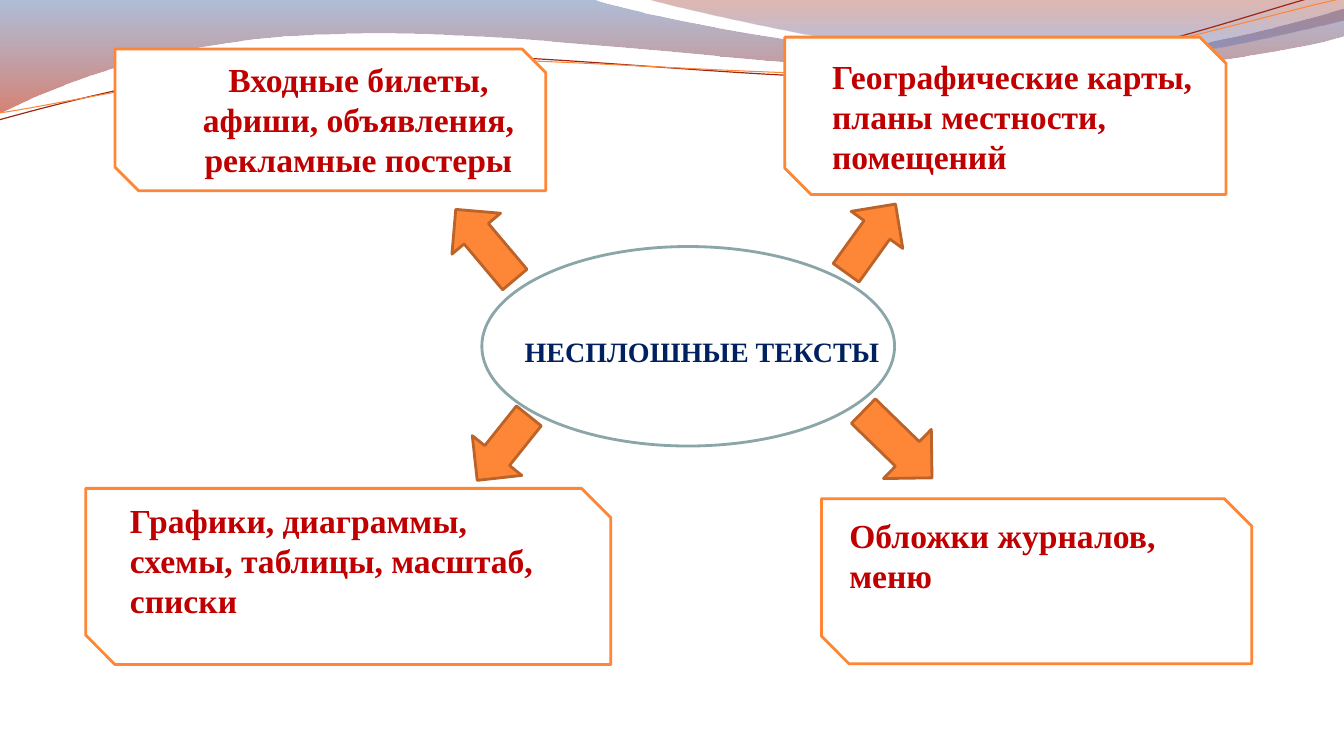
from math import cos, radians, sin

from lxml import etree
from pptx import Presentation
from pptx.dml.color import RGBColor
from pptx.enum.shapes import MSO_SHAPE
from pptx.enum.text import MSO_AUTO_SIZE, PP_ALIGN
from pptx.oxml.ns import qn
from pptx.util import Pt

CARD = MSO_SHAPE.SNIP_2_DIAG_RECTANGLE
ARROW = MSO_SHAPE.RIGHT_ARROW
OVAL = MSO_SHAPE.OVAL
FIT = MSO_AUTO_SIZE.SHAPE_TO_FIT_TEXT
LEFT, CENTER = PP_ALIGN.LEFT, PP_ALIGN.CENTER

COLORS = {
    "white": "FFFFFF", "orange": "FE8637", "dark_orange": "BC6329",
    "sage": "8AA6A8", "navy": "002060", "crimson": "C00000",
    "rust": "9E2713", "blue": "4F6EA8", "red": "B61A00",
    "brown": "951500", "sky": "5681D1",
}
RGB = {name: RGBColor.from_string(value) for name, value in COLORS.items()}

prs = Presentation()
prs.slide_width, prs.slide_height = Pt(960), Pt(540)
slide = prs.slides.add_slide(prs.slide_layouts[6])
shapes = slide.shapes


def add_curve(segments, closed):
    anchors = [(Pt(x), Pt(y)) for x, y in (segment[-1] for segment in segments)]
    builder = shapes.build_freeform(*anchors[0])
    builder.add_line_segments(anchors[1:], close=closed)
    curve = builder.convert_to_shape()
    curve.shadow.inherit = False
    for line_to, segment in zip(list(curve._element.iter(qn("a:lnTo"))), segments[1:]):
        if len(segment) == 3:
            line_to.clear()
            bend = etree.SubElement(line_to.getparent(), qn("a:cubicBezTo"))
            line_to.getparent().replace(line_to, bend)
            for x, y in segment:
                point = etree.SubElement(bend, qn("a:pt"))
                point.set("x", str(Pt(x) - curve.left))
                point.set("y", str(Pt(y) - curve.top))
    return curve


def add_preset(kind, box, fill, line, rotation=0):
    preset = shapes.add_shape(kind, *[Pt(v) for v in box])
    preset.shadow.inherit = False
    preset.rotation = rotation
    preset.fill.solid()
    preset.fill.fore_color.rgb = RGB[fill]
    preset.line.color.rgb = RGB[line]
    preset.line.width = Pt(2)
    return preset


waves = [
    ([[(0, 0)], [(422.6, -0.7)],
      [(456.5, 12.2), (637.2, 45.4), (727.9, 45.4)],
      [(819.4, 45.4), (920.2, 18.7), (959.8, 6.5)],
      [(961.2, 25.9)],
      [(943.9, 31.7), (835.2, 54.7), (715.7, 54)],
      [(596.9, 54), (366.5, 20.2), (247, 24.5)],
      [(123.8, 25.9), (43.9, 59.8), (-0.7, 81.4)],
      [(0, 0)]],
     [(0, "blue", 45), (1, "red", 55)]),
    ([[(460.1, -0.7)],
      [(488.9, 7.9), (654.5, 44.6), (738, 46.8)],
      [(821.5, 49.7), (923, 23), (959.8, 15.1)],
      [(959.8, 0)], [(460.1, -0.7)]],
     [(0, "brown", 30), (0.8, "sky", 45)]),
]
for segments, stops in waves:
    wave = add_curve(segments, True)
    wave.line.fill.background()
    wave.fill.gradient()
    wave.fill.gradient_angle = 270
    for stop, (position, color, opacity) in zip(wave.fill.gradient_stops, stops):
        stop.position = position
        stop.color.rgb = RGB[color]
    for tint, (position, color, opacity) in zip(wave._element.iter(qn("a:srgbClr")), stops):
        etree.SubElement(tint, qn("a:alpha")).set("val", str(opacity * 1000))

strands = [
    ([[(-0.7, 85.7)],
      [(46.1, 72.7), (151.9, 44.6), (265.7, 39.6)],
      [(379.4, 34.6), (568.8, 62.6), (684, 54.7)],
      [(799.2, 47.5), (901.4, 5.8), (958.3, -7.2)]], "rust", 0.85),
    ([[(0, 80.6)],
      [(45.4, 74.2), (157, 47.5), (272.2, 42.5)],
      [(386.6, 38.2), (573.1, 59), (687.6, 51.8)],
      [(802.8, 44.6), (903.6, 10.1), (960.5, -1.4)]], "orange", 0.75),
]
TILT = 2.7
turn_cos, turn_sin = cos(radians(TILT)), sin(radians(TILT))
middle_x, middle_y = 479.5, 41
for segments, color, width in strands:
    level = [[(middle_x + (x - middle_x) * turn_cos - (y - middle_y) * turn_sin,
               middle_y + (x - middle_x) * turn_sin + (y - middle_y) * turn_cos)
              for x, y in segment] for segment in segments]
    strand = add_curve(level, False)
    strand.rotation = 360 - TILT
    strand.fill.background()
    strand.line.color.rgb = RGB[color]
    strand.line.width = Pt(width)

cards = [(586.8, 356.2, 307.4, 117.9), (61.2, 348.9, 375.1, 125.8),
         (82.2, 35, 307.6, 101.3), (560.6, 26.5, 315.1, 112.4)]
for box in cards:
    add_preset(CARD, box, "white", "orange")

hub = add_preset(OVAL, (344.2, 176.1, 294.8, 142.5), "white", "sage")
hub_tint = next(hub._element.iter(qn("a:srgbClr")))
etree.SubElement(hub_tint, qn("a:alpha")).set("val", "54000")

labels = [
    ("НЕСПЛОШНЫЕ ТЕКСТЫ", (358.9, 235.1, 285.1, 31.5), 20, "navy", CENTER),
    ("Входные билеты, афиши, объявления, рекламные постеры",
     (113.5, 38.2, 285.1, 94.5), 24, "crimson", CENTER),
    ("Географические карты, планы местности, помещений",
     (587.3, 36.2, 280.8, 94.5), 24, "crimson", LEFT),
    ("Обложки журналов, меню", (599.6, 364, 285.1, 65.4), 24, "crimson", LEFT),
    ("Графики, диаграммы, схемы, таблицы, масштаб, списки",
     (85.7, 353.2, 329.8, 94.5), 24, "crimson", LEFT),
]
for text, box, size, color, alignment in labels:
    frame = shapes.add_textbox(*[Pt(v) for v in box]).text_frame
    frame.word_wrap = True
    frame.auto_size = FIT
    paragraph = frame.paragraphs[0]
    paragraph.text = text
    paragraph.alignment = alignment
    paragraph.font.name = "Times New Roman"
    paragraph.font.size = Pt(size)
    paragraph.font.bold = True
    paragraph.font.color.rgb = RGB[color]

arrows = [((607, 293, 68.4, 49), 44.2), ((313.9, 151.9, 65.5, 45.4), 229.9),
          ((591.8, 147.6, 60.5, 45.4), 305.7), ((329.8, 297.4, 59, 45.4), 128.7)]
for box, rotation in arrows:
    add_preset(ARROW, box, "orange", "dark_orange", rotation)

prs.save("out.pptx")
